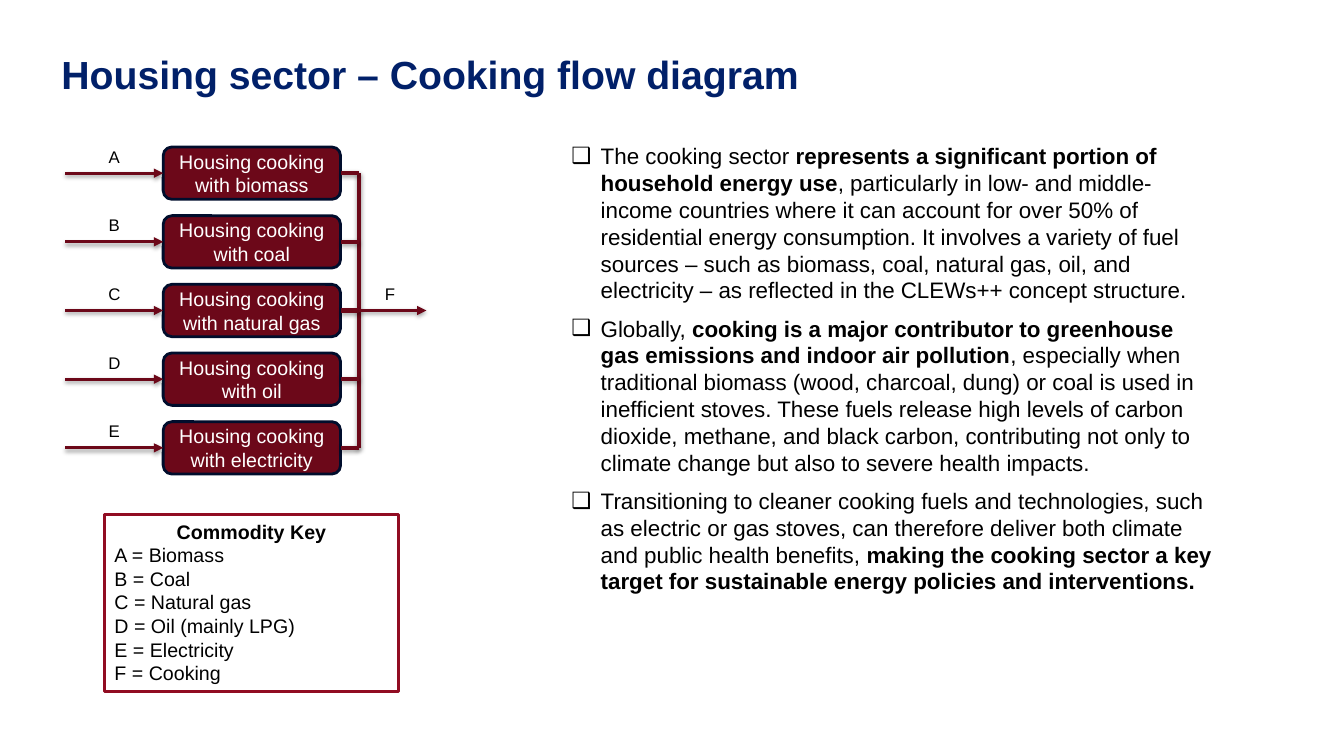
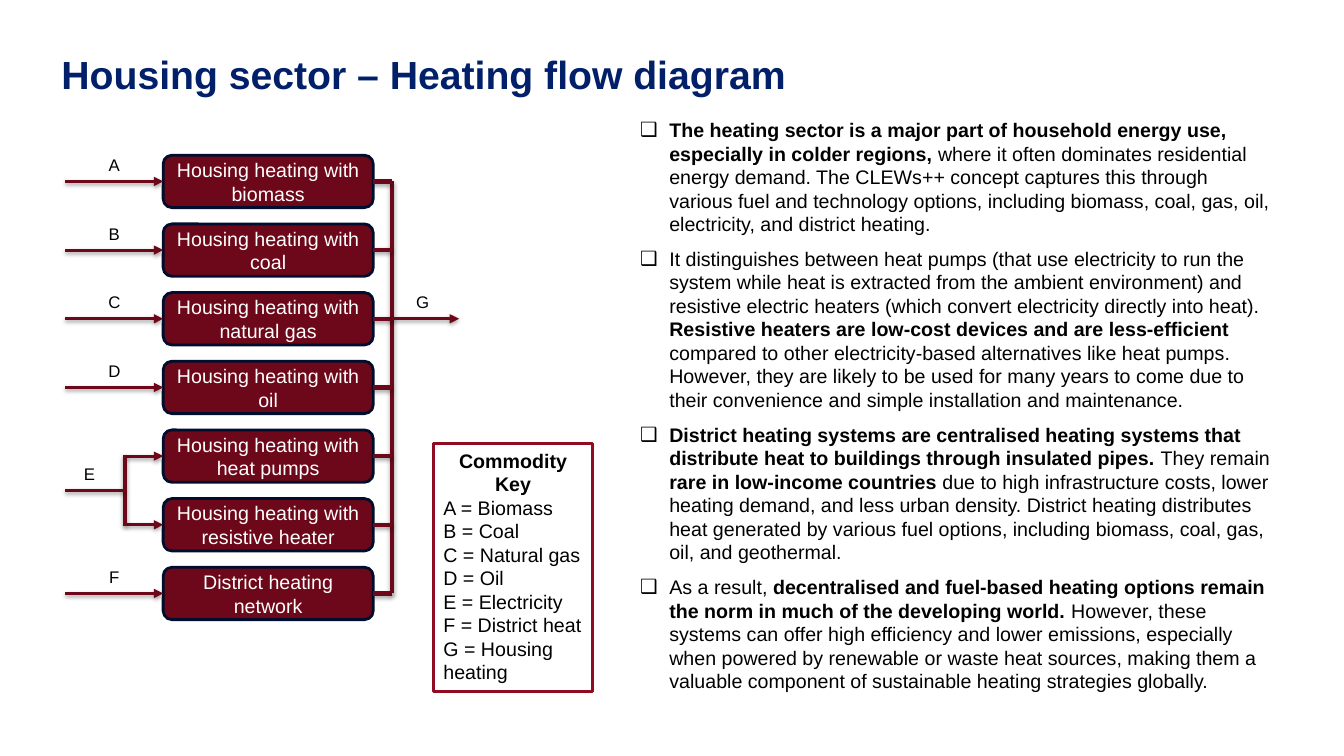
from dataclasses import dataclass

from lxml.etree import SubElement
from pptx import Presentation
from pptx.dml.color import RGBColor
from pptx.enum.shapes import MSO_CONNECTOR, MSO_SHAPE
from pptx.enum.text import MSO_ANCHOR, MSO_AUTO_SIZE, PP_ALIGN
from pptx.oxml.ns import qn
from pptx.util import Pt


@dataclass(frozen=True)
class Theme:
    font: str = "Arial"
    navy: str = "012069"
    outline: str = "000D2C"
    maroon: str = "6C0819"
    crimson: str = "910C22"
    black: str = "000000"
    white: str = "FFFFFF"
    title_size: float = 28
    text_size: float = 14
    label_size: float = 12
    arrow_width: float = 2.25
    bus_width: float = 3


THEME = Theme()
INPUT_LEFT = 46.5
BOX_LEFT = 116.6
BOX_HEIGHT = 37.4
ROW_PITCH = 49.05
BUS_GAP = 13.3
OUTPUT_LENGTH = 48
OUTPUT_ROW = 2
SPLIT_LEFT = 89.3
LABEL_WIDTH = 52
LABEL_HEIGHT = 22

COOKING_STREAMS = (
    ("A", ("Housing cooking with biomass",)),
    ("B", ("Housing cooking with coal",)),
    ("C", ("Housing cooking with natural gas",)),
    ("D", ("Housing cooking with oil",)),
    ("E", ("Housing cooking with electricity",)),
)
COOKING_KEY = (
    "A = Biomass", "B = Coal", "C = Natural gas", "D = Oil (mainly LPG)",
    "E = Electricity", "F = Cooking",
)
COOKING_POINTS = (
    "The cooking sector **represents a significant portion of household energy use**, "
    "particularly in low- and middle-income countries where it can account for over 50% of "
    "residential energy consumption. It involves a variety of fuel sources – such as biomass, "
    "coal, natural gas, oil, and electricity – as reflected in the CLEWs++ concept structure.",
    "Globally, **cooking is a major contributor to greenhouse gas emissions and indoor air "
    "pollution**, especially when traditional biomass (wood, charcoal, dung) or coal is used in "
    "inefficient stoves. These fuels release high levels of carbon dioxide, methane, and black "
    "carbon, contributing not only to climate change but also to severe health impacts.",
    "Transitioning to cleaner cooking fuels and technologies, such as electric or gas stoves, "
    "can therefore deliver both climate and public health benefits, **making the cooking sector "
    "a key target for sustainable energy policies and interventions.**",
)
HEATING_STREAMS = (
    ("A", ("Housing heating with biomass",)),
    ("B", ("Housing heating with coal",)),
    ("C", ("Housing heating with natural gas",)),
    ("D", ("Housing heating with oil",)),
    ("E", ("Housing heating with heat pumps", "Housing heating with resistive heater")),
    ("F", ("District heating network",)),
)
HEATING_KEY = (
    "A = Biomass", "B = Coal", "C = Natural gas", "D = Oil",
    "E = Electricity", "F = District heat", "G = Housing heating",
)
HEATING_POINTS = (
    "**The heating sector is a major part of household energy use, especially in colder "
    "regions, **where it often dominates residential energy demand. The CLEWs++ concept "
    "captures this through various fuel and technology options, including biomass, coal, gas, "
    "oil, electricity, and district heating.",
    "It distinguishes between heat pumps (that use electricity to run the system while heat is "
    "extracted from the ambient environment) and resistive electric heaters (which convert "
    "electricity directly into heat). **Resistive heaters are low-cost devices and are "
    "less-efficient** compared to other electricity-based alternatives like heat pumps. "
    "However, they are likely to be used for many years to come due to their convenience and "
    "simple installation and maintenance.",
    "**District heating systems are centralised heating systems that distribute heat to "
    "buildings through insulated pipes. **They remain **rare in low-income countries** due to "
    "high infrastructure costs, lower heating demand, and less urban density. District heating "
    "distributes heat generated by various fuel options, including biomass, coal, gas, oil, "
    "and geothermal.",
    "As a result, **decentralised and fuel-based heating options remain the norm in much of the "
    "developing world. **However, these systems can offer high efficiency and lower emissions, "
    "especially when powered by renewable or waste heat sources, making them a valuable "
    "component of sustainable heating strategies globally.",
)


def color(value):
    return RGBColor.from_string(value)


def place(box, left, top, width, height):
    box.left, box.top, box.width, box.height = Pt(left), Pt(top), Pt(width), Pt(height)


def style_paragraph(para, size, ink, align=PP_ALIGN.LEFT, bold=False):
    para.alignment = align
    para.font.name = THEME.font
    para.font.size = Pt(size)
    para.font.bold = bold
    para.font.color.rgb = color(ink)


def prepare_frame(box, anchor):
    frame = box.text_frame
    frame.word_wrap = True
    frame.auto_size = MSO_AUTO_SIZE.NONE
    frame.vertical_anchor = anchor
    return frame


def next_paragraph(frame, index):
    return frame.add_paragraph() if index else frame.paragraphs[0]


def add_title(page, text):
    box = page.shapes.title
    place(box, 36.7, 22.3, 848, 51)
    para = prepare_frame(box, MSO_ANCHOR.BOTTOM).paragraphs[0]
    para.text = text
    para.line_spacing = 0.9
    style_paragraph(para, THEME.title_size, THEME.navy, bold=True)


def add_bullet(para):
    props = para._p.get_or_add_pPr()
    props.set("marL", str(Pt(20.9)))
    props.set("indent", str(-Pt(20.9)))
    tint = SubElement(props, qn("a:buClr"))
    SubElement(tint, qn("a:srgbClr"), val=THEME.black)
    SubElement(props, qn("a:buFont"), typeface=THEME.font)
    SubElement(props, qn("a:buChar"), char="❑")


def add_points(page, points, frame_box, size):
    box = page.placeholders[1]
    place(box, *frame_box)
    frame = prepare_frame(box, MSO_ANCHOR.TOP)
    for index, point in enumerate(points):
        para = next_paragraph(frame, index)
        add_bullet(para)
        para.space_before = Pt(8 if index else 0)
        style_paragraph(para, size, THEME.black)
        for order, text in enumerate(point.split("**")):
            if text:
                span = para.add_run()
                span.text = text
                if order % 2:
                    span.font.bold = True


def add_key(page, entries, frame_box):
    box = page.shapes.add_shape(MSO_SHAPE.RECTANGLE, *map(Pt, frame_box))
    box.shadow.inherit = False
    box.fill.background()
    box.line.color.rgb = color(THEME.crimson)
    box.line.width = Pt(2.25)
    frame = prepare_frame(box, MSO_ANCHOR.TOP)
    for index, entry in enumerate(("Commodity Key", *entries)):
        para = next_paragraph(frame, index)
        para.text = entry
        align = PP_ALIGN.LEFT if index else PP_ALIGN.CENTER
        style_paragraph(para, THEME.text_size, THEME.black, align, bold=index == 0)


def add_process(page, text, top, width):
    box = page.shapes.add_shape(
        MSO_SHAPE.ROUNDED_RECTANGLE, Pt(BOX_LEFT), Pt(top), Pt(width), Pt(BOX_HEIGHT))
    box.shadow.inherit = False
    box.fill.solid()
    box.fill.fore_color.rgb = color(THEME.maroon)
    box.line.color.rgb = color(THEME.outline)
    box.line.width = Pt(2)
    para = prepare_frame(box, MSO_ANCHOR.MIDDLE).paragraphs[0]
    para.text = text
    style_paragraph(para, THEME.text_size, THEME.white, PP_ALIGN.CENTER)
    return box


def add_label(page, text, center, line_y):
    box = page.shapes.add_textbox(
        Pt(center - LABEL_WIDTH / 2), Pt(line_y - LABEL_HEIGHT - 0.7),
        Pt(LABEL_WIDTH), Pt(LABEL_HEIGHT))
    para = prepare_frame(box, MSO_ANCHOR.TOP).paragraphs[0]
    para.text = text
    style_paragraph(para, THEME.label_size, THEME.black, PP_ALIGN.CENTER)


def add_line(page, start, end, width, arrow=False):
    line = page.shapes.add_connector(MSO_CONNECTOR.STRAIGHT, *map(Pt, (*start, *end)))
    line.line.color.rgb = color(THEME.maroon)
    line.line.width = Pt(width)
    if arrow:
        SubElement(line.line._get_or_add_ln(), qn("a:tailEnd"), type="triangle")
    effects = SubElement(line._element.spPr, qn("a:effectLst"))
    shadow = SubElement(
        effects, qn("a:outerShdw"), blurRad=str(Pt(3.1)), dist=str(Pt(1.6)),
        dir="5400000", rotWithShape="0")
    tint = SubElement(shadow, qn("a:srgbClr"), val=THEME.black)
    SubElement(tint, qn("a:alpha"), val="37000")
    return line


def add_input(page, label, boxes, middles):
    split = len(boxes) > 1
    start = SPLIT_LEFT if split else INPUT_LEFT
    for box, middle in zip(boxes, middles):
        arrow = add_line(page, (start, middle), (BOX_LEFT, middle), THEME.arrow_width, arrow=True)
        arrow.end_connect(box, 1)
    center = sum(middles) / len(middles)
    if split:
        add_line(page, (SPLIT_LEFT, middles[0] - 1), (SPLIT_LEFT, middles[-1] + 1), THEME.bus_width)
        add_line(page, (INPUT_LEFT, center), (SPLIT_LEFT, center), THEME.arrow_width)
    add_label(page, label, 64 if split else 81.7, center)


def add_output(page, label, boxes, middles, box_right):
    bus = box_right + BUS_GAP
    add_line(page, (bus, middles[0]), (bus, middles[-1]), THEME.bus_width)
    for box, middle in zip(boxes, middles):
        stub = add_line(page, (bus, middle), (box_right, middle), THEME.bus_width)
        stub.end_connect(box, 3)
    level = middles[OUTPUT_ROW]
    add_line(page, (bus, level), (bus + OUTPUT_LENGTH, level), THEME.arrow_width, arrow=True)
    add_label(page, label, bus + 22, level)


def add_flow(page, streams, output, top, width):
    boxes, middles = [], []
    for label, names in streams:
        first = len(boxes)
        for name in names:
            box_top = top + len(boxes) * ROW_PITCH
            boxes.append(add_process(page, name, box_top, width))
            middles.append(box_top + BOX_HEIGHT / 2)
        add_input(page, label, boxes[first:], middles[first:])
    add_output(page, output, boxes, middles, BOX_LEFT + width)


def add_page(deck, title):
    page = deck.slides.add_slide(deck.slide_layouts[1])
    add_title(page, title)
    return page


def main():
    deck = Presentation()
    deck.slide_width, deck.slide_height = Pt(960), Pt(540)

    cooking = add_page(deck, "Housing sector – Cooking flow diagram")
    add_points(cooking, COOKING_POINTS, (401, 98, 474, 333), 16)
    add_flow(cooking, COOKING_STREAMS, "F", 105, 126.7)
    add_key(cooking, COOKING_KEY, (74.7, 367.7, 210, 126))

    heating = add_page(deck, "Housing sector – Heating flow diagram")
    add_points(heating, HEATING_POINTS, (450, 80.6, 466.6, 422), THEME.text_size)
    add_key(heating, HEATING_KEY, (309.6, 316.8, 113.8, 177))
    add_flow(heating, HEATING_STREAMS, "G", 110.9, 150)

    deck.save("out.pptx")


if __name__ == "__main__":
    main()
